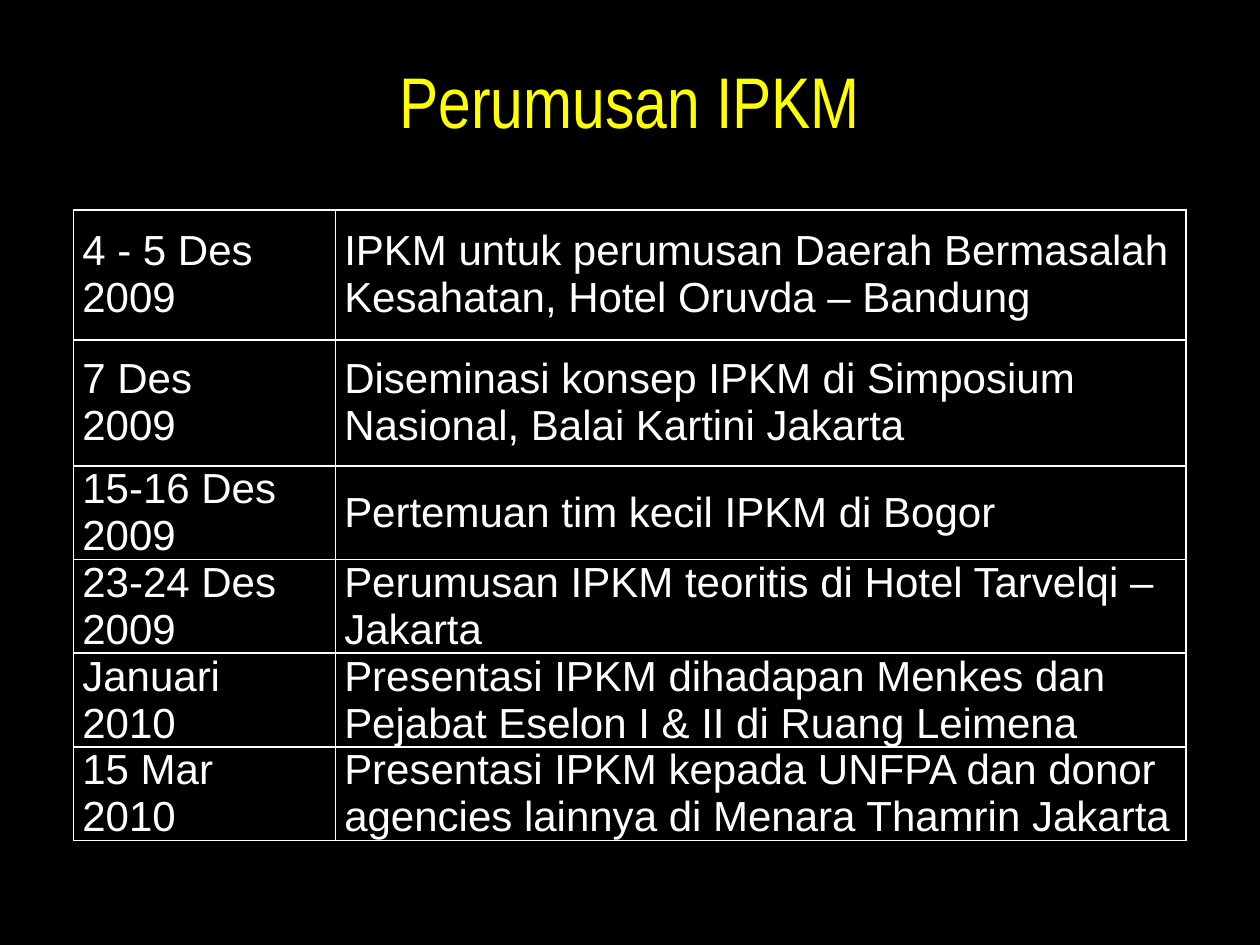
from lxml import etree
from pptx import Presentation
from pptx import util as u
from pptx.dml import color
from pptx.enum import text
from pptx.oxml import ns

WHITE, YELLOW, BLACK = "FFFFFF", "FFFF00", "000000"
COLUMN_WIDTHS = (5.28, 17.15)
ROW_HEIGHTS = (2.62, 2.54, 1.78, 1.65, 1.47, 1.47)
AGENDA = (
    ("4 - 5 Des 2009", "IPKM untuk perumusan Daerah Bermasalah Kesahatan, Hotel Oruvda – Bandung"),
    ("7 Des\n2009", "Diseminasi konsep IPKM di Simposium Nasional, Balai Kartini Jakarta"),
    ("15-16 Des 2009", "Pertemuan tim kecil IPKM di Bogor"),
    ("23-24 Des 2009", "Perumusan IPKM teoritis di Hotel Tarvelqi – Jakarta"),
    ("Januari\n2010", "Presentasi IPKM dihadapan Menkes dan Pejabat Eselon I & II di Ruang Leimena"),
    ("15 Mar\n2010", "Presentasi IPKM kepada UNFPA dan donor agencies lainnya di Menara Thamrin Jakarta"),
)


def rgb(code):
    return color.RGBColor.from_string(code)


def apply(target, values):
    for name, value in values.items():
        setattr(target, name, value)


def format_text(paragraphs, font_values, hue):
    for paragraph in paragraphs:
        for run in paragraph.runs:
            apply(run.font, font_values)
            run.font.color.rgb = rgb(hue)


def add_borders(cell, hue, width):
    properties = cell._tc.get_or_add_tcPr()
    for position, side in enumerate(("lnL", "lnR", "lnT", "lnB")):
        border = etree.Element(ns.qn(f"a:{side}"), w=str(u.Pt(width)))
        fill = etree.SubElement(border, ns.qn("a:solidFill"))
        etree.SubElement(fill, ns.qn("a:srgbClr"), val=hue)
        properties.insert(position, border)


def set_title(slide, wording):
    title = slide.shapes.title
    apply(title, {"left": u.Cm(1.27), "top": u.Cm(0.43),
                  "width": u.Cm(22.86), "height": u.Cm(3.18)})
    frame = title.text_frame
    frame.text = wording
    apply(frame, {"word_wrap": True, "auto_size": text.MSO_AUTO_SIZE.NONE,
                  "vertical_anchor": text.MSO_ANCHOR.MIDDLE})
    frame.paragraphs[0].alignment = text.PP_ALIGN.CENTER
    format_text(frame.paragraphs, {"name": "Arial Narrow", "size": u.Pt(41)}, YELLOW)


def fill_cell(cell, wording):
    cell.text = wording
    apply(cell, {"margin_left": u.Cm(0.18), "margin_right": u.Cm(0.18),
                 "margin_top": 0, "margin_bottom": 0,
                 "vertical_anchor": text.MSO_ANCHOR.MIDDLE})
    cell.fill.background()
    add_borders(cell, WHITE, 1)
    format_text(cell.text_frame.paragraphs, {"name": "Arial", "size": u.Pt(24)}, WHITE)


def add_agenda(slide):
    agenda = slide.shapes.add_table(
        len(AGENDA), len(COLUMN_WIDTHS), u.Cm(1.48), u.Cm(4.23),
        u.Cm(sum(COLUMN_WIDTHS)), u.Cm(sum(ROW_HEIGHTS))).table
    apply(agenda, {"first_row": False, "horz_banding": False})
    for column, width in zip(agenda.columns, COLUMN_WIDTHS):
        column.width = u.Cm(width)
    for row, height, entries in zip(agenda.rows, ROW_HEIGHTS, AGENDA):
        row.height = u.Cm(height)
        for cell, wording in zip(row.cells, entries):
            fill_cell(cell, wording)


def main():
    deck = Presentation()
    apply(deck, {"slide_width": u.Cm(25.4), "slide_height": u.Cm(19.05)})
    slide = deck.slides.add_slide(deck.slide_layouts.get_by_name("Title Only"))
    backdrop = slide.background.fill
    backdrop.solid()
    backdrop.fore_color.rgb = rgb(BLACK)
    set_title(slide, "Perumusan IPKM")
    add_agenda(slide)
    deck.save("out.pptx")


if __name__ == "__main__":
    main()
